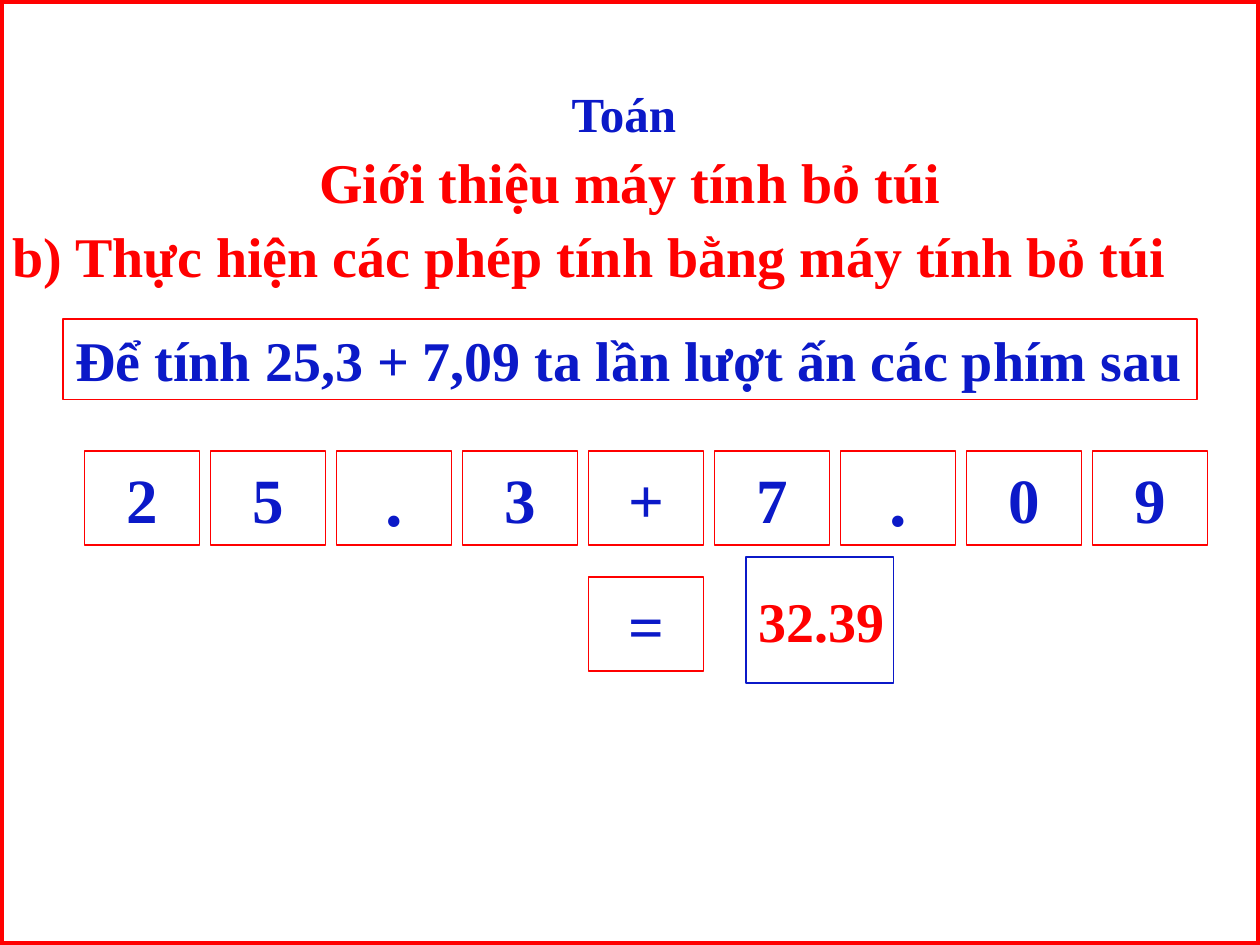
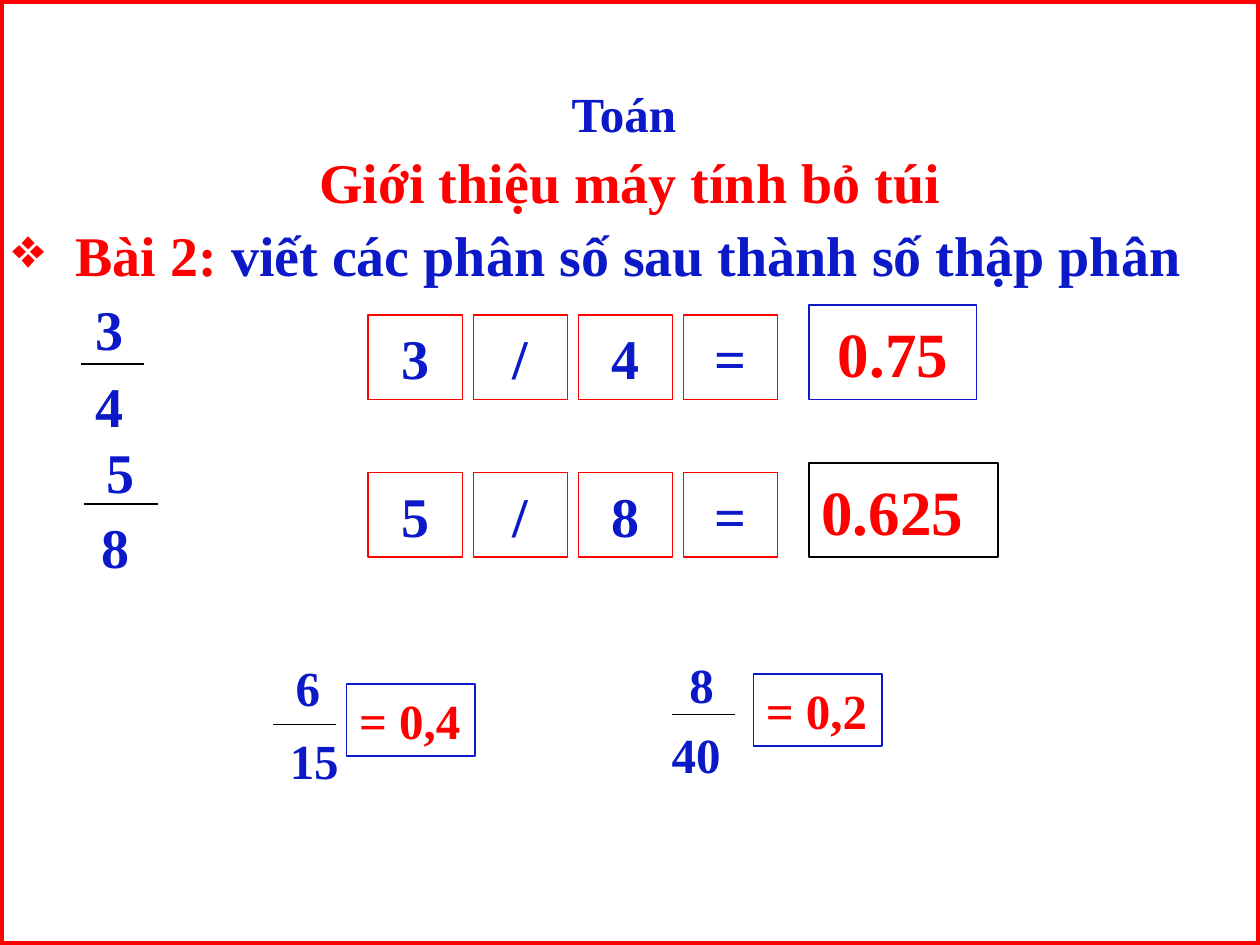
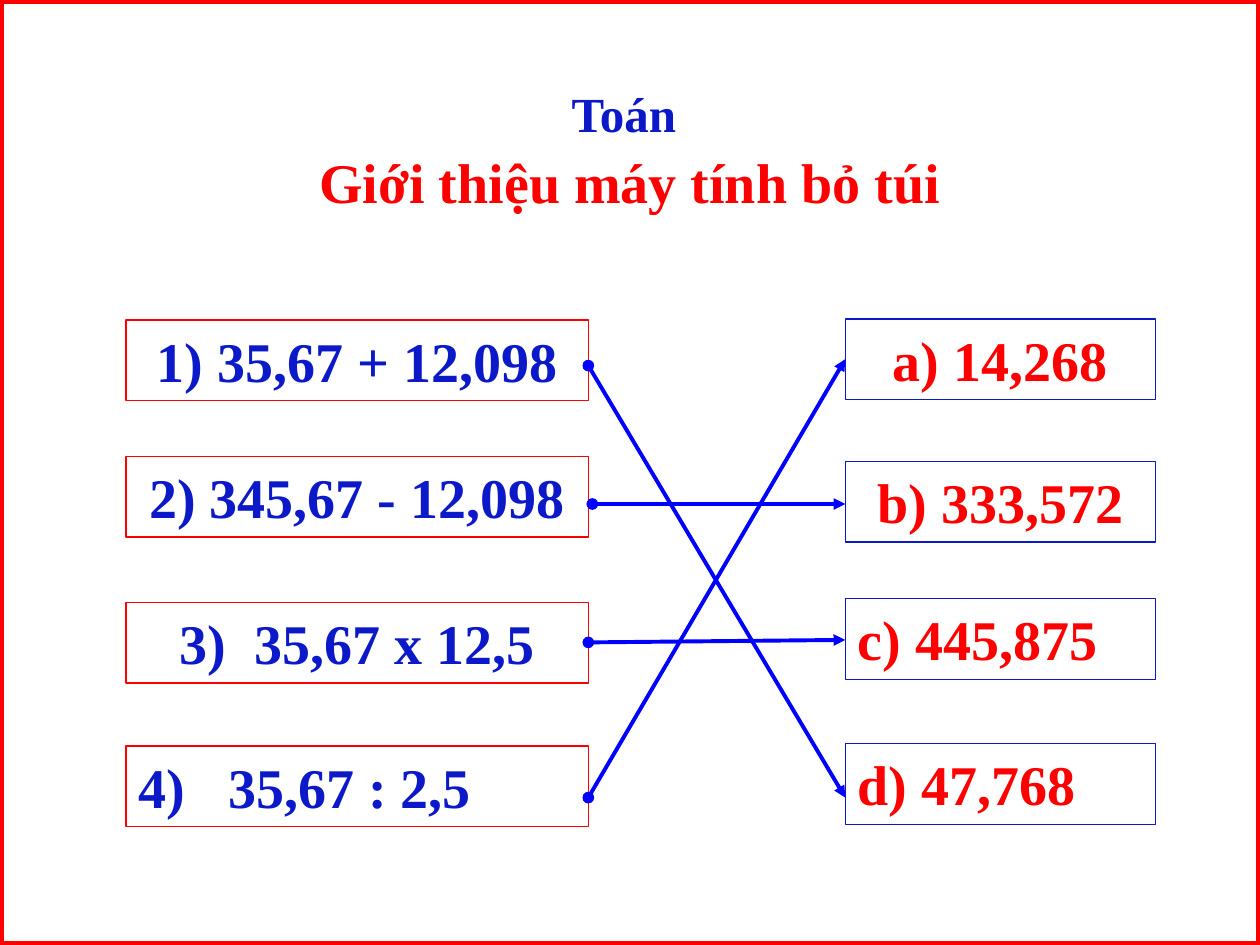
from lxml.etree import SubElement
from pptx import Presentation
from pptx.dml.color import RGBColor
from pptx.enum.shapes import MSO_CONNECTOR, MSO_SHAPE
from pptx.enum.text import MSO_ANCHOR, PP_ALIGN
from pptx.oxml.ns import qn
from pptx.util import Cm, Pt

RED = RGBColor(0xFF, 0x00, 0x00)
NAVY = RGBColor(0x0B, 0x19, 0xC8)
BLUE = RGBColor(0x00, 0x00, 0xFF)
BLACK = RGBColor(0x00, 0x00, 0x00)
WHITE = RGBColor(0xFF, 0xFF, 0xFF)
FONT = "Times New Roman"
WIDE, HIGH = 25.4, 19.05
TALL = {28: 1.45, 32: 1.63}  # height of a one-line box by text size
LEFT, MID = PP_ALIGN.LEFT, PP_ALIGN.CENTER

# Content, lengths in cm
HEADS = [("Toán ", 1.55, 28, NAVY), ("Giới thiệu máy tính bỏ túi", 2.84, 32, RED)]

PART = "b) Thực hiện các phép tính bằng máy tính bỏ túi"
GUIDE = "Để tính 25,3 + 7,09 ta lần lượt ấn các phím sau"
KEYS = "25.3+7.09"
TOTAL = "32.39"

TASK = [("Bài 2: ", RED), ("viết các phân số sau thành số thập phân", NAVY)]
# keys, top, answer, answer width, border, border width, alignment
SUMS = [
    ("3/4=", 6.35, "0.75", 3.38, NAVY, 0.75, MID),
    ("5/8=", 9.53, "0.625", 3.81, BLACK, 1, LEFT),
]
# size, rule (left, top, width), then two parts (text, left, top, width)
FRACS = [
    (32, (1.63, 7.34, 1.27), ("3", 1.47, 5.82, 1.47), ("4", 1.47, 7.37, 1.47)),
    (32, (1.7, 10.16, 1.48), ("5", 1.7, 8.69, 1.47), ("8", 1.7, 10.21, 1.27)),
    (28, (5.51, 14.6, 1.27), ("6", 5.47, 13.13, 1.47), ("15", 5.28, 14.6, 2.11)),
    (28, (13.54, 14.4, 1.27), ("8", 13.41, 13.06, 1.47), ("40", 13.21, 14.48, 1.65)),
]
ENDS = [("= 0,4", 6.99, 13.79), ("= 0,2", 15.19, 13.59)]

# text, top, alignment, hanging indent
ASKS = [
    ("1) 35,67 + 12,098", 6.45, MID, None),
    ("2) 345,67 - 12,098", 9.2, MID, None),
    ("3)\t35,67 x 12,5", 12.14, LEFT, (2.34, -1.51)),
    ("4)\t35,67 : 2,5", 15.04, LEFT, (1.81, -1.81)),
]
REPLIES = [
    ("a) 14,268", 6.43, MID),
    ("b) 333,572", 9.3, MID),
    ("c) 445,875", 12.07, LEFT),
    ("d) 47,768", 14.99, LEFT),
]
# start x, start y, end y
LINKS = [(11.86, 7.37, 16.08), (11.94, 10.16, 10.16),
         (11.86, 12.95, 12.9), (11.86, 16.08, 7.24)]


def text(slide, words, x, y, w, h=None, size=32, color=NAVY, align=MID,
         line=None, weight=0.75, fill=None, key=False, wrap=True,
         hang=None, bullet=None):
    """Place text; words is a string or a list of (string, color)."""
    box = (Cm(x), Cm(y), Cm(w), Cm(h or TALL[size]))
    if line is None:
        shape = slide.shapes.add_textbox(*box)
    else:
        shape = slide.shapes.add_shape(MSO_SHAPE.RECTANGLE, *box)
        shape.shadow.inherit = False
        shape.line.color.rgb = line
        shape.line.width = Pt(weight)
        if fill is None:
            shape.fill.background()
        else:
            shape.fill.solid()
            shape.fill.fore_color.rgb = fill
    if not words:
        return
    frame = shape.text_frame
    frame.word_wrap = wrap and not key
    frame.vertical_anchor = MSO_ANCHOR.MIDDLE if key else MSO_ANCHOR.TOP
    para = frame.paragraphs[0]
    para.alignment = align
    if not key:
        para.space_before = Pt(size / 8)
    props = para._p.get_or_add_pPr()
    if hang:
        props.set("marL", str(Cm(hang[0])))
        props.set("indent", str(Cm(hang[1])))
    if bullet:
        SubElement(props, qn("a:buChar")).set("char", bullet)
    for part, tint in ([(words, color)] if isinstance(words, str) else words):
        run = para.add_run()
        run.text = part
        run.font.name = FONT
        run.font.size = Pt(size)
        run.font.bold = True
        run.font.color.rgb = tint


def rule(slide, x, y, to_x, to_y, color=BLACK, weight=0.75, arrow=False):
    link = slide.shapes.add_connector(
        MSO_CONNECTOR.STRAIGHT, Cm(x), Cm(y), Cm(to_x), Cm(to_y))
    link.line.color.rgb = color
    link.line.width = Pt(weight)
    if arrow:
        pen = link.line._get_or_add_ln()
        SubElement(pen, qn("a:headEnd")).set("type", "oval")
        SubElement(pen, qn("a:tailEnd")).set("type", "triangle")
    SubElement(link._element.spPr, qn("a:effectLst"))


def start(deck):
    """Add a slide with the shared frame and headings."""
    slide = deck.slides.add_slide(deck.slide_layouts[6])
    text(slide, "", 0, 0, WIDE, HIGH, line=RED, weight=4.5)
    for words, y, size, color in HEADS:
        text(slide, words, 0, y, WIDE, size=size, color=color)
    return slide


def press(deck):
    slide = start(deck)
    text(slide, PART, 0, 4.34, WIDE, color=RED, align=LEFT)
    text(slide, GUIDE, 1.27, 6.43, 22.86, align=LEFT, line=RED)
    # Key row, with the equals key under the plus key
    left, top, step = 1.7, 9.09, 2.54
    spots = [(sign, i, top) for i, sign in enumerate(KEYS)]
    spots.append(("=", KEYS.index("+"), top + step))
    for sign, i, y in spots:
        text(slide, sign, left + i * step, y, 2.33, 1.9,
             size=40 if sign == "." else 36, line=RED, key=True)
    text(slide, TOTAL, 15.04, 11.23, 2.97, 2.54, color=RED, align=LEFT,
         line=NAVY, fill=WHITE, key=True)


def convert(deck):
    slide = start(deck)
    text(slide, TASK, 0, 4.32, WIDE, align=LEFT, hang=(1.27, -1.27), bullet="❖")
    # Key rows with answers
    for keys, y, answer, w, edge, weight, align in SUMS:
        for i, sign in enumerate(keys):
            text(slide, sign, 7.42 + i * 2.12, y, 1.9, 1.7, line=RED, key=True)
        text(slide, answer, 16.31, y - 0.2, w, 1.9, size=36, color=RED,
             align=align, line=edge, weight=weight, key=True)
    # Fractions
    for size, (x, y, w), *parts in FRACS:
        rule(slide, x, y, x + w, y)
        for part, px, py, pw in parts:
            text(slide, part, px, py, pw, size=size)
    for words, x, y in ENDS:
        text(slide, words, x, y, 2.59, size=28, color=RED, align=LEFT,
             line=NAVY, wrap=False)


def match(deck):
    slide = start(deck)
    for words, y, align, hang in ASKS:
        text(slide, words, 2.54, y, 9.32, align=align, line=RED, hang=hang)
    for words, y, align in REPLIES:
        text(slide, words, 17.04, y, 6.25, color=RED, align=align, line=NAVY)
    for x, y, to_y in LINKS:
        rule(slide, x, y, 17.04, to_y, color=BLUE, weight=2.25, arrow=True)


def main():
    deck = Presentation()
    deck.slide_width, deck.slide_height = Cm(WIDE), Cm(HIGH)
    for build in (press, convert, match):
        build(deck)
    deck.save("out.pptx")


if __name__ == "__main__":
    main()
